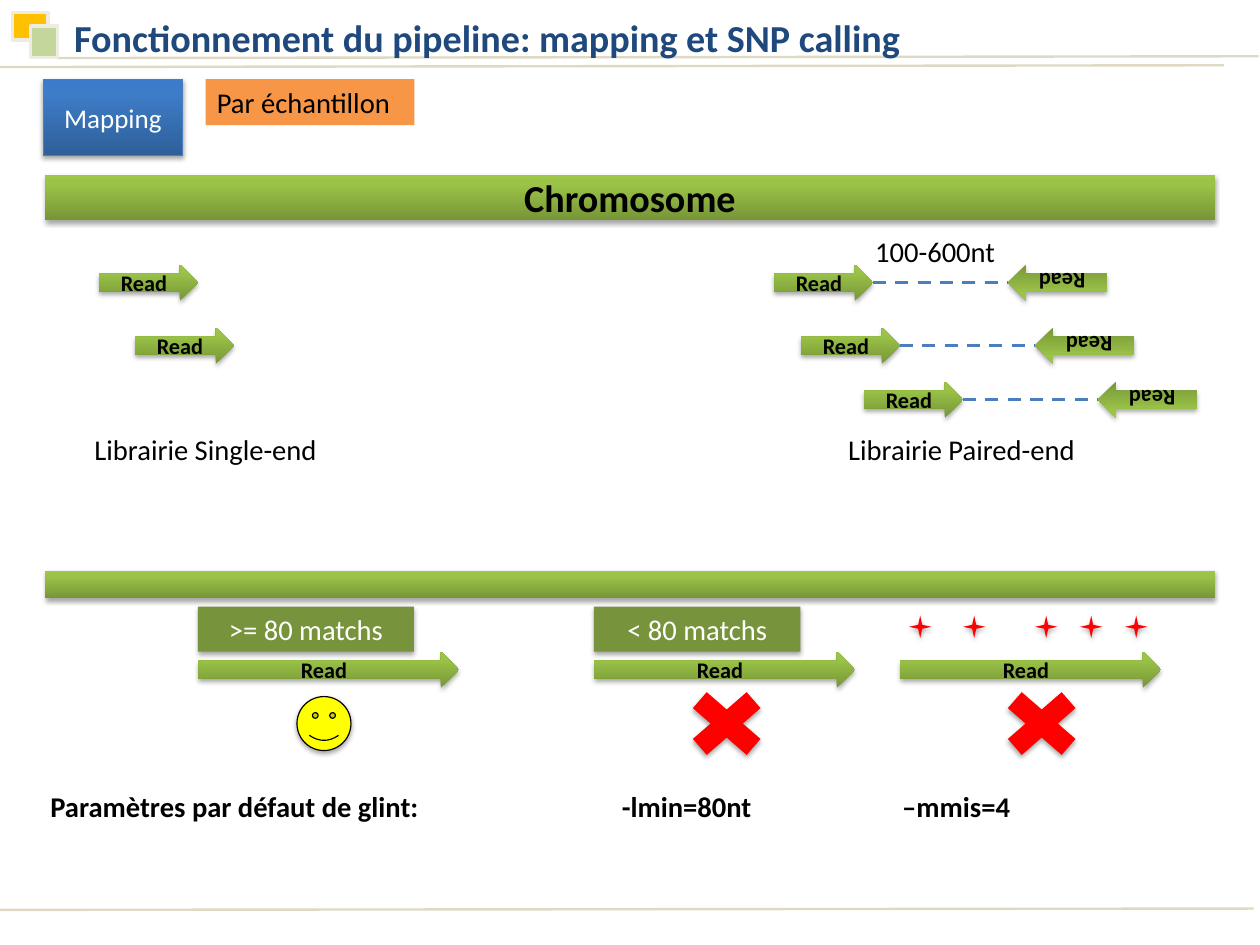
from dataclasses import dataclass

from lxml.etree import SubElement
from pptx import Presentation
from pptx.dml.color import RGBColor
from pptx.enum.dml import MSO_LINE
from pptx.enum.shapes import MSO_CONNECTOR, MSO_SHAPE as Geo
from pptx.enum.text import MSO_ANCHOR as Anchor, PP_ALIGN as Align
from pptx.oxml import parse_xml
from pptx.oxml.ns import nsdecls, qn
from pptx.util import Cm, Pt

COLS, ROWS = 28, 21
GREEN = ("779737", "9BC348", "9DC746")
BLUE = ("2F5F99", "3D7CC7", "3A7CCB")
OLIVE, RED, BLACK, WHITE = "77933C", "FF0000", "000000", "FFFFFF"
RULE, FRAME, DASH = "DDD9C3", "EEECE1", "4B7EBC"

READ_H = 0.8
READ_W, LONG_READ_W = 2.2, 5.8
PAIR_STEP = 5.2  # columns from a forward read to its mate

prs = Presentation()
prs.slide_width, prs.slide_height = Cm(28), Cm(21)
s = prs.slides.add_slide(prs.slide_layouts[6])


@dataclass
class Shape:
    """Preset shape placed in grid columns and rows."""
    geo: Geo
    x: float
    y: float
    w: float
    h: float
    fill: str | tuple[str, ...]
    text: str = ""
    size: float = 18
    color: str = WHITE
    bold: bool = False
    line: str | None = None
    line_w: float = 0.75
    shadow: bool = True
    rotation: float = 0


@dataclass
class Label:
    """Text box placed in grid columns and rows."""
    text: str
    x: float
    y: float
    w: float
    h: float = 1.02
    size: float = 18
    color: str = BLACK
    bold: bool = False
    wrap: bool = False
    fill: str | None = None
    anchor: Anchor = Anchor.TOP
    tabs: tuple[float, ...] = ()


def col(n: float) -> int:
    return round(prs.slide_width * n / COLS)


def row(n: float) -> int:
    return round(prs.slide_height * n / ROWS)


def rgb(hex_color: str) -> RGBColor:
    return RGBColor.from_string(hex_color)


def set_font(p, size: float, color: str, bold: bool) -> None:
    p.font.name, p.font.size, p.font.bold = "Calibri", Pt(size), bold
    p.font.color.rgb = rgb(color)


def paint(sp, fill: str | tuple[str, ...]) -> None:
    """Solid fill for one colour, upward gradient for three."""
    if isinstance(fill, str):
        sp.fill.solid()
        sp.fill.fore_color.rgb = rgb(fill)
        return
    stops = "".join(f'<a:gs pos="{pos * 1000}"><a:srgbClr val="{c}"/></a:gs>'
                    for pos, c in zip((0, 80, 100), fill))
    sp.element.spPr.find(qn("a:prstGeom")).addnext(parse_xml(
        f'<a:gradFill {nsdecls("a")} rotWithShape="1"><a:gsLst>{stops}</a:gsLst>'
        '<a:lin ang="16200000" scaled="0"/></a:gradFill>'))


def add_shadow(sp) -> None:
    sp.element.spPr.find(qn("a:effectLst")).append(parse_xml(
        f'<a:outerShdw {nsdecls("a")} blurRad="{Pt(3.1)}" dist="{Pt(1.8)}" dir="5400000" '
        'rotWithShape="0"><a:srgbClr val="000000"><a:alpha val="35000"/></a:srgbClr>'
        '</a:outerShdw>'))


def draw_shape(d: Shape):
    sp = s.shapes.add_shape(d.geo, col(d.x), row(d.y), col(d.w), row(d.h))
    sp.rotation = d.rotation
    paint(sp, d.fill)
    if d.line:
        sp.line.color.rgb, sp.line.width = rgb(d.line), Pt(d.line_w)
    else:
        sp.line.fill.background()
    sp.shadow.inherit = False
    if d.shadow:
        add_shadow(sp)
    if d.text:
        tf = sp.text_frame
        tf.vertical_anchor = Anchor.MIDDLE
        p = tf.paragraphs[0]
        p.text, p.alignment = d.text, Align.CENTER
        set_font(p, d.size, d.color, d.bold)
    return sp


def draw_label(d: Label) -> None:
    sp = s.shapes.add_textbox(col(d.x), row(d.y), col(d.w), row(d.h))
    if d.fill:
        paint(sp, d.fill)
    tf = sp.text_frame
    tf.word_wrap, tf.vertical_anchor = d.wrap, d.anchor
    p = tf.paragraphs[0]
    p.text = d.text
    if d.tabs:
        tab_list = SubElement(p._p.get_or_add_pPr(), qn("a:tabLst"))
        for tab in d.tabs:
            SubElement(tab_list, qn("a:tab"), pos=str(col(tab)), algn="l")
    set_font(p, d.size, d.color, d.bold)


def draw_line(x1: float, y1: float, x2: float, y2: float, color: str, width: float):
    c = s.shapes.add_connector(MSO_CONNECTOR.STRAIGHT, col(x1), row(y1), col(x2), row(y2))
    c.line.color.rgb, c.line.width = rgb(color), Pt(width)
    SubElement(c.element.spPr, qn("a:effectLst"))
    return c


def draw_read(x: float, y: float, w: float = READ_W, rotation: float = 0):
    return draw_shape(Shape(Geo.RIGHT_ARROW, x, y, w, READ_H, GREEN, "Read", 14, BLACK,
                            True, rotation=rotation))


def draw_pair(x: float, y: float) -> None:
    """Forward read, reversed mate and the dashed insert between their tips."""
    forward = draw_read(x, y)
    draw_read(x + PAIR_STEP, y, rotation=180)
    middle = y + READ_H / 2
    insert = draw_line(x + READ_W, middle, x + PAIR_STEP, middle, DASH, 2)
    insert.line.dash_style = MSO_LINE.DASH
    insert.begin_connect(forward, 3)


RULES = [(1.27, 1.29, 27.97, 1.25), (0, 1.49, 27.2, 1.45), (0, 20.22, 27.86, 20.19)]
SHAPES = [
    Shape(Geo.RECTANGLE, 0.28, 0.28, 0.79, 0.61, "FFC000", line=FRAME, line_w=2, shadow=False),
    Shape(Geo.RECTANGLE, 0.67, 0.58, 0.61, 0.7, "C3D69B", line=FRAME, line_w=2, shadow=False),
    Shape(Geo.RECTANGLE, 1, 3.88, 26, 1, GREEN, "Chromosome", 24, BLACK, True),
    Shape(Geo.FLOWCHART_PROCESS, 0.96, 1.76, 3.1, 1.7, BLUE, "Mapping", 17, line=DASH),
    Shape(Geo.RECTANGLE, 1, 12.68, 26, 0.6, GREEN),
    Shape(Geo.RECTANGLE, 4.4, 13.48, 4.8, 1, OLIVE, ">= 80 matchs"),
    Shape(Geo.RECTANGLE, 13.2, 13.48, 4.59, 1, OLIVE, "< 80 matchs"),
    *(Shape(Geo.STAR_4_POINT, x, 13.68, 0.5, 0.5, RED) for x in (20.2, 21.4, 23, 24, 25)),
    *(Shape(Geo.MATH_MULTIPLY, x, 15.08, 2.3, 2, RED) for x in (15, 22)),
    Shape(Geo.SMILEY_FACE, 6.6, 15.48, 1.2, 1.2, "FFFF00", line=BLACK),
]
LABELS = [
    Label("Librairie Single-end", 1.85, 9.48, 5.92),
    Label("Librairie Paired-end", 18.6, 9.48, 6.05),
    Label("100-600nt", 19.2, 5.07, 3.43),
    Label("Par échantillon", 4.57, 1.76, 4.64, fill="F79646"),
    Label("Paramètres par défaut de glint:\t-lmin=80nt\t–mmis=4", 0.87, 17.41, 27.02,
          bold=True, wrap=True, tabs=(12.7, 18.93)),
    Label("Fonctionnement du pipeline: mapping et SNP calling", 1.4, 0.3, 25.2, 1.04, 24,
          "1F497D", True, True, anchor=Anchor.MIDDLE),
]

for rule in RULES:
    draw_line(*rule, RULE, 1.5)
for shape in SHAPES:
    draw_shape(shape)
for x, y in ((2.2, 5.88), (3, 7.28)):
    draw_read(x, y)
for x, y in ((17.2, 5.88), (17.8, 7.28), (19.2, 8.48)):
    draw_pair(x, y)
for x in (4.4, 13.2, 20):
    draw_read(x, 14.48, LONG_READ_W)
for label in LABELS:
    draw_label(label)

prs.save("out.pptx")
